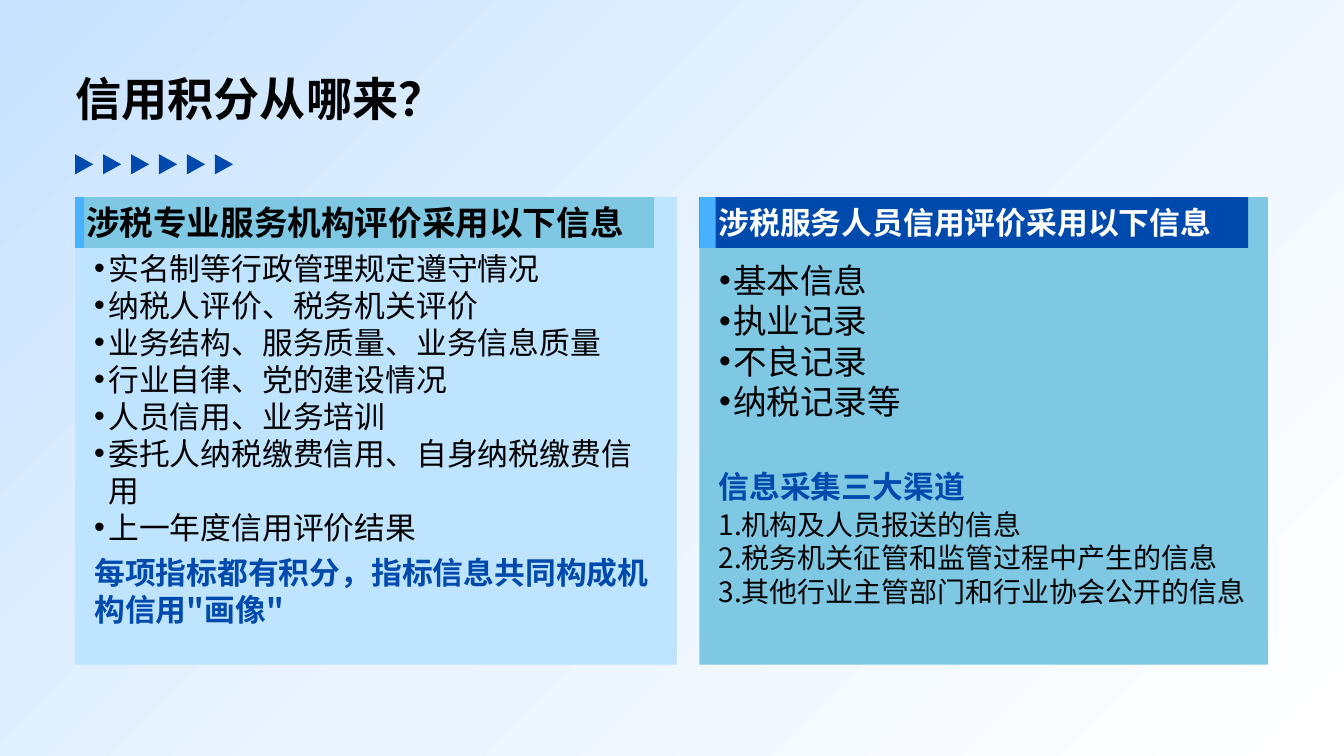
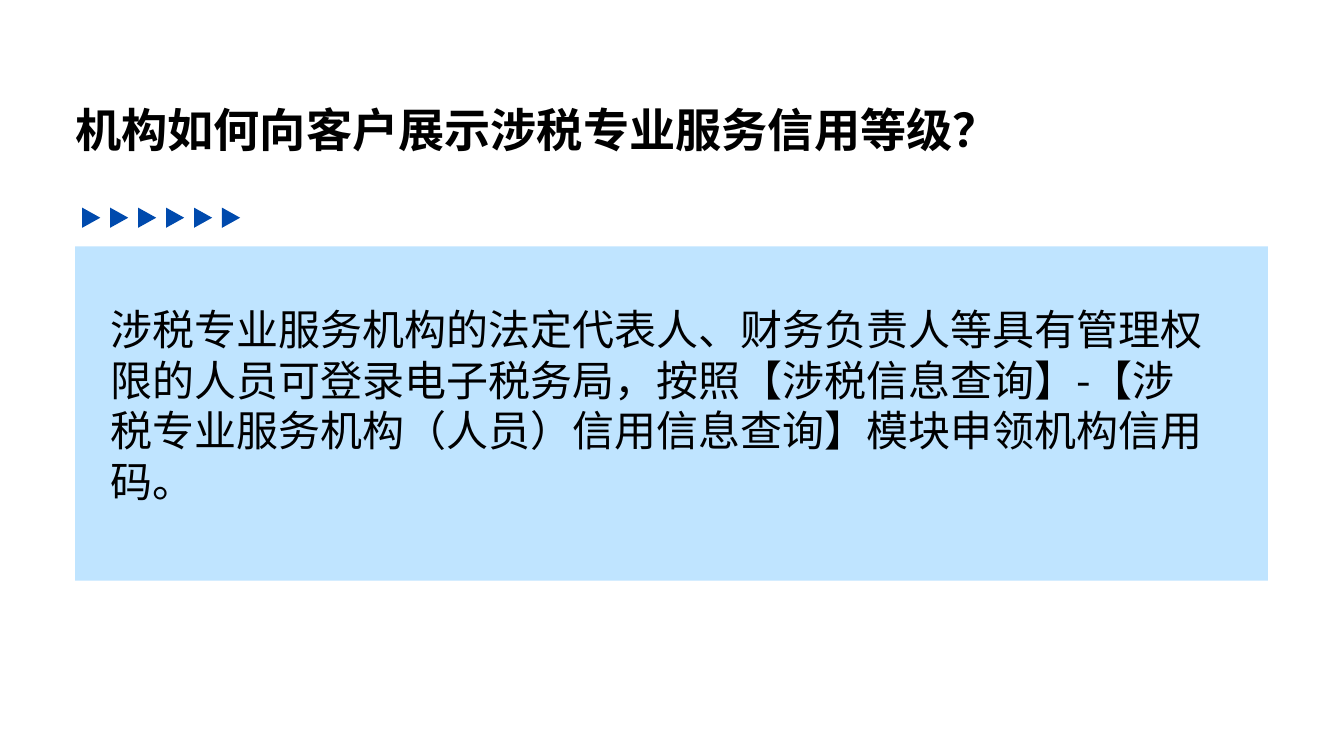
from copy import deepcopy

from lxml import etree
from pptx import Presentation
from pptx.dml.color import RGBColor
from pptx.enum import shapes, text
from pptx.oxml.ns import qn
from pptx.util import Inches, Pt

FONT = "Noto Sans CJK SC"
BLACK = RGBColor(0x00, 0x00, 0x00)
WHITE = RGBColor(0xFF, 0xFF, 0xFF)
NAVY = RGBColor(0x00, 0x4A, 0xAD)
TEAL = RGBColor(0x7E, 0xC8, 0xE3)
PALE = RGBColor(0xBF, 0xE4, 0xFF)
SKY = RGBColor(0x48, 0xB2, 0xFF)
BACKDROP = [(0, RGBColor(0xC7, 0xE2, 0xFF)), (0.5, RGBColor(0xEA, 0xF4, 0xFF)), (1, WHITE)]

SOURCES_TITLE = "信用积分从哪来？"
AGENCY = {
    "heading": "涉税专业服务机构评价采用以下信息",
    "items": [
        "实名制等行政管理规定遵守情况",
        "纳税人评价、税务机关评价",
        "业务结构、服务质量、业务信息质量",
        "行业自律、党的建设情况",
        "人员信用、业务培训",
        "委托人纳税缴费信用、自身纳税缴费信用",
        "上一年度信用评价结果",
    ],
    "summary": "每项指标都有积分，指标信息共同构成机构信用\"画像\"",
}
STAFF = {
    "heading": "涉税服务人员信用评价采用以下信息",
    "items": ["基本信息", "执业记录", "不良记录", "纳税记录等"],
}
CHANNELS = {
    "heading": "信息采集三大渠道",
    "items": [
        "机构及人员报送的信息",
        "税务机关征管和监管过程中产生的信息",
        "其他行业主管部门和行业协会公开的信息",
    ],
}
DISPLAY_TITLE = "机构如何向客户展示涉税专业服务信用等级？"
DISPLAY_ANSWER = (
    "涉税专业服务机构的法定代表人、财务负责人等具有管理权限的人员可登录电子税务局，"
    "按照【涉税信息查询】-【涉税专业服务机构（人员）信用信息查询】模块申领机构信用码。"
)

LEFT = 1.49
RIGHT_PANEL = 13.88
PANEL_TOP, PANEL_HEIGHT, BAND_HEIGHT = 3.91, 9.28, 1.01
HEADING_TOP = 4.1
ARROWS, ARROW_PITCH = 6, 0.555


def place(shape, box):
    shape.left, shape.top, shape.width, shape.height = (Inches(v) for v in box)
    shape.element.getparent().append(shape.element)
    frame = shape.text_frame
    frame.margin_left = frame.margin_top = frame.margin_right = frame.margin_bottom = 0
    frame.auto_size = text.MSO_AUTO_SIZE.NONE
    frame.vertical_anchor = text.MSO_ANCHOR.TOP
    frame.word_wrap = True
    return frame


def new_frame(slide, box):
    return place(slide.shapes.add_textbox(*(Inches(v) for v in box)), box)


def write(frame, line, size, color=BLACK, bold=False, marker=None, before=0):
    first = frame.paragraphs[0]
    paragraph = frame.add_paragraph() if first.runs else first
    properties = paragraph._p.get_or_add_pPr()
    indent = Inches(0.28) if marker else 0
    properties.set("marL", str(indent))
    properties.set("indent", str(-indent))
    if marker == "number":
        etree.SubElement(properties, qn("a:buAutoNum"), type="arabicPeriod")
    elif marker:
        etree.SubElement(properties, qn("a:buChar"), char=marker)
    else:
        etree.SubElement(properties, qn("a:buNone"))
    paragraph.alignment = text.PP_ALIGN.LEFT
    paragraph.space_before = Pt(before)
    paragraph.line_spacing = Pt(round(size * 1.2, 1))
    run = paragraph.add_run()
    run.text = line
    run.font.size = Pt(size)
    run.font.bold = bold
    run.font.color.rgb = color
    run.font.name = FONT
    etree.SubElement(run.font._element, qn("a:ea"), typeface=FONT)


def write_list(frame, items, size, marker="•"):
    for item in items:
        write(frame, item, size, marker=marker)


def add_block(slide, box, color, kind=shapes.MSO_SHAPE.RECTANGLE):
    block = slide.shapes.add_shape(kind, *(Inches(v) for v in box))
    block.shadow.inherit = False
    block.fill.solid()
    block.fill.fore_color.rgb = color
    block.line.fill.background()
    return block


def add_arrows(slide, left, top):
    for i in range(ARROWS):
        box = (left + i * ARROW_PITCH, top, 0.4, 0.36)
        add_block(slide, box, NAVY, shapes.MSO_SHAPE.ISOSCELES_TRIANGLE).rotation = 90


def add_title(slide, title, box):
    frame = place(slide.shapes.title, box)
    frame.word_wrap = False
    write(frame, title, 66, bold=True)


def add_heading(slide, heading, box, size, color):
    frame = new_frame(slide, box)
    frame.word_wrap = False
    frame.vertical_anchor = text.MSO_ANCHOR.MIDDLE
    write(frame, heading, size, color, bold=True)


def add_panel(slide, left, width, color, band_width, band_color, tab_width):
    add_block(slide, (left, PANEL_TOP, width, PANEL_HEIGHT), color)
    add_block(slide, (left, PANEL_TOP, band_width, BAND_HEIGHT), band_color)
    add_block(slide, (left, PANEL_TOP, tab_width, BAND_HEIGHT), SKY)


def set_backdrop(slide):
    fill = slide.background.fill
    fill.gradient()
    fill.gradient_angle = 315
    stops = slide.element.find(".//" + qn("a:gsLst"))
    stops.insert(1, deepcopy(stops[0]))
    for stop, (position, color) in zip(fill.gradient_stops, BACKDROP):
        stop.position = position
        stop.color.rgb = color


def build_sources(prs):
    slide = prs.slides.add_slide(prs.slide_layouts[3])
    set_backdrop(slide)
    add_title(slide, SOURCES_TITLE, (LEFT, 1.4, 10.32, 1.64))
    add_arrows(slide, 1.47, 3.08)

    add_panel(slide, LEFT, 11.94, PALE, 11.49, TEAL, 0.18)
    add_heading(slide, AGENCY["heading"], (1.71, HEADING_TOP, 6.39, 0.62), 48, BLACK)
    agency = place(slide.placeholders[1], (1.87, 4.95, 11.11, 7.22))
    write_list(agency, AGENCY["items"], 44)
    write(agency, AGENCY["summary"], 44, NAVY, bold=True, before=12)

    add_panel(slide, RIGHT_PANEL, 11.28, TEAL, 10.89, NAVY, 0.32)
    add_heading(slide, STAFF["heading"], (14.26, HEADING_TOP, 6.39, 0.62), 44, WHITE)
    staff = place(slide.placeholders[2], (14.27, 5.16, 10.5, 3.47))
    write_list(staff, STAFF["items"], 48)
    add_heading(slide, CHANNELS["heading"], (14.26, 9.37, 5.56, 0.56), 44, NAVY)
    channels = new_frame(slide, (14.26, 10.06, 10.5, 2.78))
    write_list(channels, CHANNELS["items"], 40, "number")


def build_display(prs):
    slide = prs.slides.add_slide(prs.slide_layouts[1])
    slide.background.fill.solid()
    slide.background.fill.fore_color.rgb = WHITE
    add_arrows(slide, 1.61, 4.14)
    add_block(slide, (LEFT, 4.89, 23.67, 6.63), PALE)
    add_title(slide, DISPLAY_TITLE, (LEFT, 2.01, 21.94, 0.62))
    write(place(slide.placeholders[1], (2.19, 6.03, 21.94, 3.95)), DISPLAY_ANSWER, 60)


def main():
    prs = Presentation()
    prs.slide_width, prs.slide_height = Inches(26.67), Inches(15)
    build_sources(prs)
    build_display(prs)
    prs.save("out.pptx")


if __name__ == "__main__":
    main()
